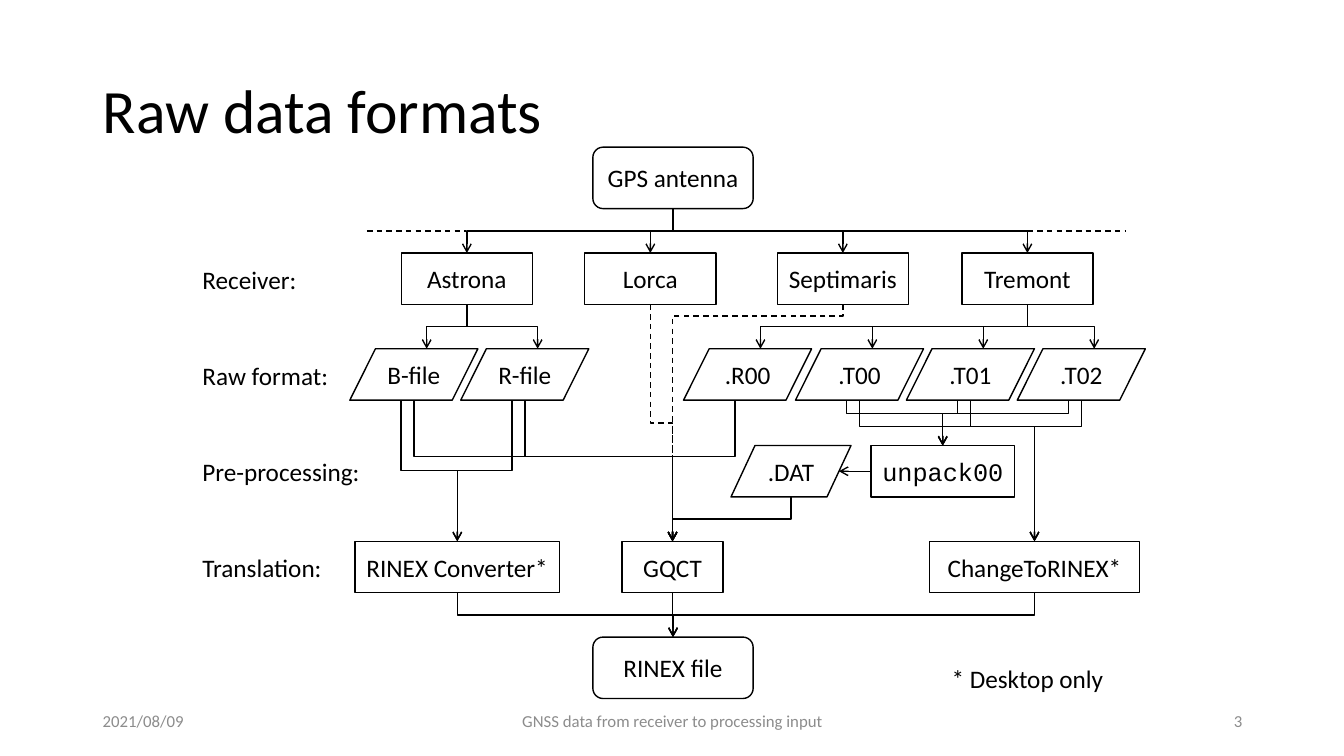
from collections import namedtuple

from lxml import etree
from pptx import Presentation
from pptx import util as u
from pptx.dml.color import RGBColor
from pptx.enum import dml, shapes, text
from pptx.oxml import ns

PX = 9144
BLACK = RGBColor(0x00, 0x00, 0x00)
WHITE = RGBColor(0xFF, 0xFF, 0xFF)
GREY = RGBColor(0x8C, 0x8C, 0x8C)
FONT = "Calibri"
MONO = "Courier New"
ROUNDED = shapes.MSO_SHAPE.FLOWCHART_ALTERNATE_PROCESS
PROCESS = shapes.MSO_SHAPE.FLOWCHART_PROCESS
FILE = shapes.MSO_SHAPE.FLOWCHART_DATA
LEFT, CENTER, RIGHT = text.PP_ALIGN.LEFT, text.PP_ALIGN.CENTER, text.PP_ALIGN.RIGHT

Box = namedtuple("Box", "left top width height")


def emu(*lengths):
    return [round(length * PX) for length in lengths]


def middle(box):
    return box.left + box.width / 2


def bottom(box):
    return box.top + box.height


def write(shape, words, size=18, color=BLACK, align=LEFT, font=FONT, wrap=True):
    frame = shape.text_frame
    frame.text = words
    frame.word_wrap = wrap
    frame.vertical_anchor = text.MSO_ANCHOR.MIDDLE
    paragraph = frame.paragraphs[0]
    paragraph.alignment = align
    run_font = paragraph.runs[0].font
    run_font.name, run_font.size = font, u.Pt(size)
    run_font.color.rgb = color


def add_text(slide, box, words, **style):
    shape = slide.shapes.add_textbox(*emu(*box))
    write(shape, words, **style)
    return shape


def add_node(slide, box, kind, words, font=FONT):
    shape = slide.shapes.add_shape(kind, *emu(*box))
    shape.shadow.inherit = False
    shape.fill.solid()
    shape.fill.fore_color.rgb = WHITE
    shape.line.color.rgb = BLACK
    shape.line.width = u.Pt(1)
    write(shape, words, align=CENTER, font=font)
    shape.text_frame.margin_left = shape.text_frame.margin_right = 0
    return box


def add_line(slide, kind, start, end, dashed=False, arrow=True):
    line = slide.shapes.add_connector(kind, *emu(*start, *end))
    line.line.color.rgb = BLACK
    line.line.width = u.Pt(1)
    if dashed:
        line.line.dash_style = dml.MSO_LINE.DASH
    properties = line._element.spPr
    if arrow:
        etree.SubElement(line.line._get_or_add_ln(), ns.qn("a:tailEnd"), type="arrow")
    etree.SubElement(properties, ns.qn("a:effectLst"))
    return line


def add_elbow(slide, start, end, bend=50, dashed=False):
    (x1, y1), (x2, y2) = start, end
    run, drop = abs(x2 - x1), y2 - y1
    left, top = (x1 + x2 - drop) / 2, (y1 + y2 - run) / 2
    near, far = left, left + drop
    if x2 >= x1:
        near, far = far, near
    line = add_line(slide, shapes.MSO_CONNECTOR.ELBOW, (near, top), (far, top + run), dashed)
    line.rotation = 270 if x2 >= x1 else 90
    guides = line._element.spPr.find(ns.qn("a:prstGeom")).get_or_add_avLst()
    etree.SubElement(guides, ns.qn("a:gd"), name="adj1", fmla=f"val {round(bend * 1000)}")


def link(slide, source, target, leave=0.5, enter=0.5, **style):
    start = source.left + source.width * leave, bottom(source)
    end = target.left + target.width * enter, target.top
    add_elbow(slide, start, end, **style)


def heading(slide, box):
    shape = add_text(slide, box, "Raw data formats", size=44)
    shape.text_frame.paragraphs[0].line_spacing = 0.9


def footer(slide, box):
    parts = [(0, 300, "2021/08/09", LEFT),
             (350, 450, "GNSS data from receiver to processing input", CENTER),
             (850, 300, "3", RIGHT)]
    for offset, width, words, align in parts:
        add_text(slide, Box(box.left + offset, box.top, width, box.height), words,
                 size=12, color=GREY, align=align)


def row(slide, box, label, nodes):
    add_text(slide, Box(box.left, box.top + 6, 180, 40), label, wrap=False)
    return [add_node(slide, Box(box.left + offset, box.top, width, box.height), kind, words, font)
            for words, offset, width, kind, font in nodes]


def receiver_row(slide, box):
    names = zip(("Astrona", "Lorca", "Septimaris", "Tremont"), (207, 389, 580, 763))
    return row(slide, box, "Receiver:", [(name, x, 130, PROCESS, FONT) for name, x in names])


def raw_row(slide, box):
    names = zip(("B-file", "R-file", ".R00", ".T00", ".T01", ".T02"), (0, 1, 3, 4, 5, 6))
    return row(slide, box, "Raw format:",
               [(name, 156 + round(110.4 * slot), 127, FILE, FONT) for name, slot in names])


def processing_row(slide, box):
    return row(slide, box, "Pre-processing:",
               [(".DAT", 534, 119, FILE, FONT), ("unpack00", 673, 142, PROCESS, MONO)])


def translation_row(slide, box):
    nodes = [("RINEX Converter*", 161, 203), ("GQCT", 426, 100), ("ChangeToRINEX*", 731, 208)]
    return row(slide, box, "Translation:", [(*node, PROCESS, FONT) for node in nodes])


def receiver_wiring(slide, antenna, receivers):
    for receiver in receivers:
        link(slide, antenna, receiver)
    bus = (bottom(antenna) + receivers[0].top) / 2
    for x in (middle(receivers[0]) - 99, middle(receivers[-1])):
        add_line(slide, shapes.MSO_CONNECTOR.STRAIGHT, (x, bus), (x + 98, bus),
                 dashed=True, arrow=False)


def format_wiring(slide, receivers, raw, dat, unpacker, translators):
    first, second, third, fourth = receivers
    converter, checker, changer = translators
    for source, files in ((first, raw[:2]), (fourth, raw[2:])):
        for file in files:
            link(slide, source, file, enter=0.6)
    link(slide, second, checker, dashed=True)
    link(slide, third, checker, bend=4.9, dashed=True)
    for file in raw[:2]:
        link(slide, file, converter, leave=0.4)
        link(slide, file, checker, bend=40)
    link(slide, raw[2], checker, leave=0.4, bend=40)
    for file in raw[3:]:
        link(slide, file, unpacker, leave=0.4, bend=30)
        link(slide, file, changer, bend=18.5)
    level = unpacker.top + unpacker.height / 2
    add_line(slide, shapes.MSO_CONNECTOR.STRAIGHT, (unpacker.left, level),
             (dat.left + dat.width * 0.9, level))
    link(slide, dat, checker)


def flowchart(slide, box):
    antenna = add_node(slide, Box(box.left + 397, box.top, 159, 61), ROUNDED, "GPS antenna")
    result = add_node(slide, Box(box.left + 397, box.top + 486, 159, 61), ROUNDED, "RINEX file")
    bands = [Box(box.left, box.top + 105 + round(95.4 * index), box.width, 51)
             for index in range(4)]
    receivers = receiver_row(slide, bands[0])
    raw = raw_row(slide, bands[1])
    dat, unpacker = processing_row(slide, bands[2])
    translators = translation_row(slide, bands[3])
    receiver_wiring(slide, antenna, receivers)
    format_wiring(slide, receivers, raw, dat, unpacker, translators)
    for translator in translators:
        link(slide, translator, result)
    add_text(slide, Box(box.left + 743, box.top + 507, 184, 40), "* Desktop only", wrap=False)


def main():
    presentation = Presentation()
    presentation.slide_width, presentation.slide_height = emu(1333, 750)
    slide = presentation.slides.add_slide(presentation.slide_layouts[6])
    heading(slide, Box(92, 40, 1150, 145))
    footer(slide, Box(92, 695, 1150, 40))
    flowchart(slide, Box(191, 146, 946, 547))
    presentation.save("out.pptx")


if __name__ == "__main__":
    main()
